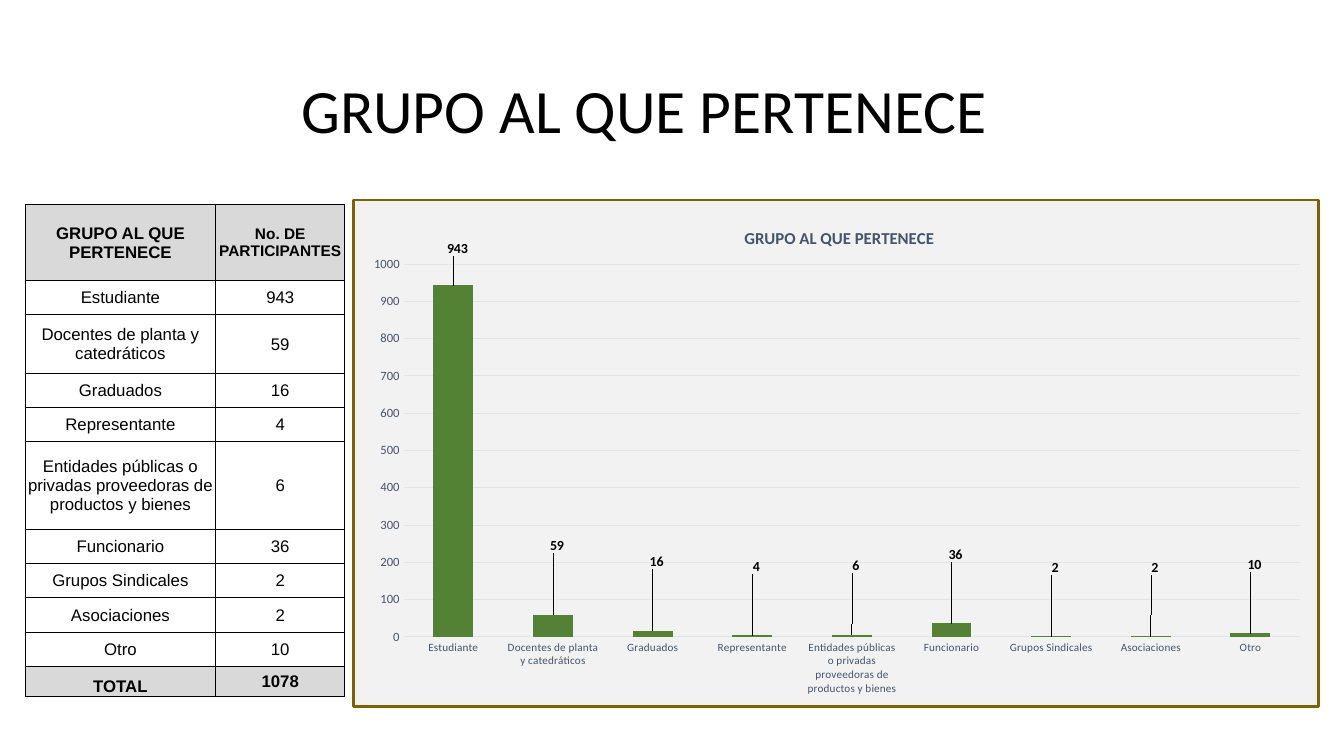
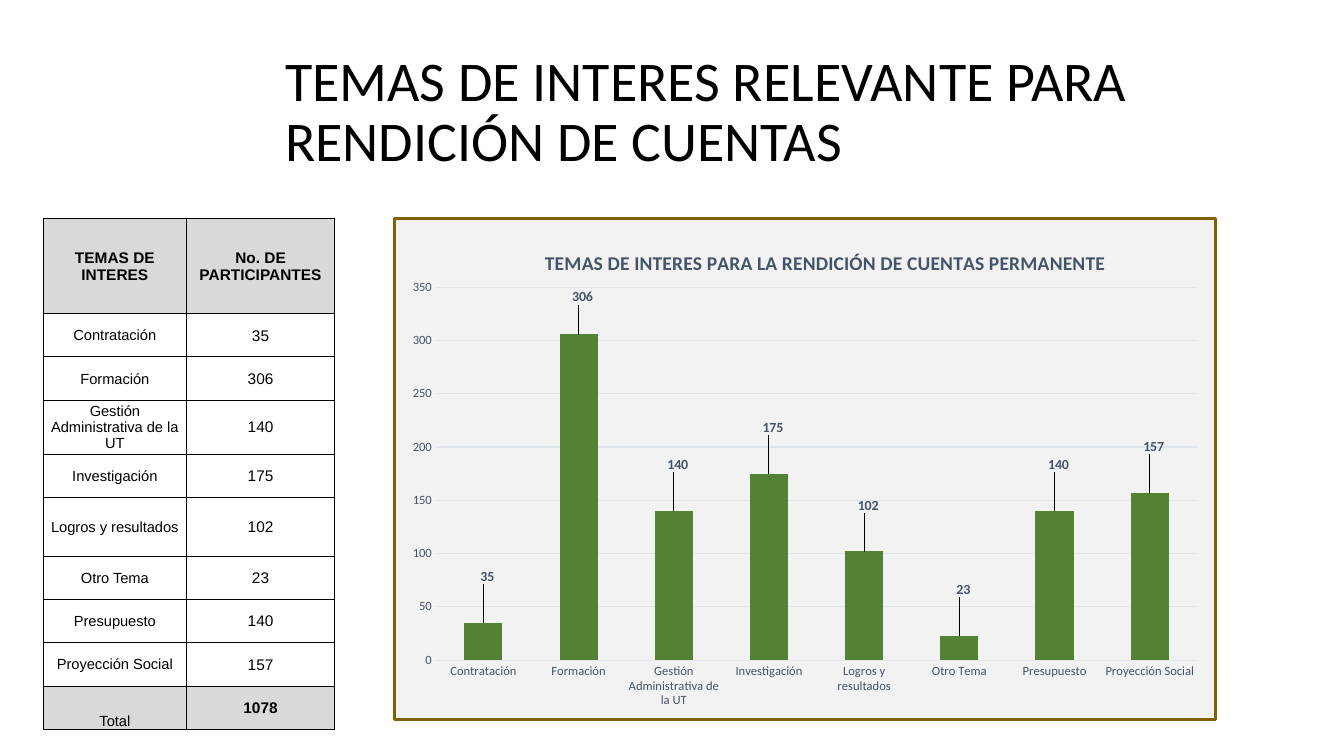
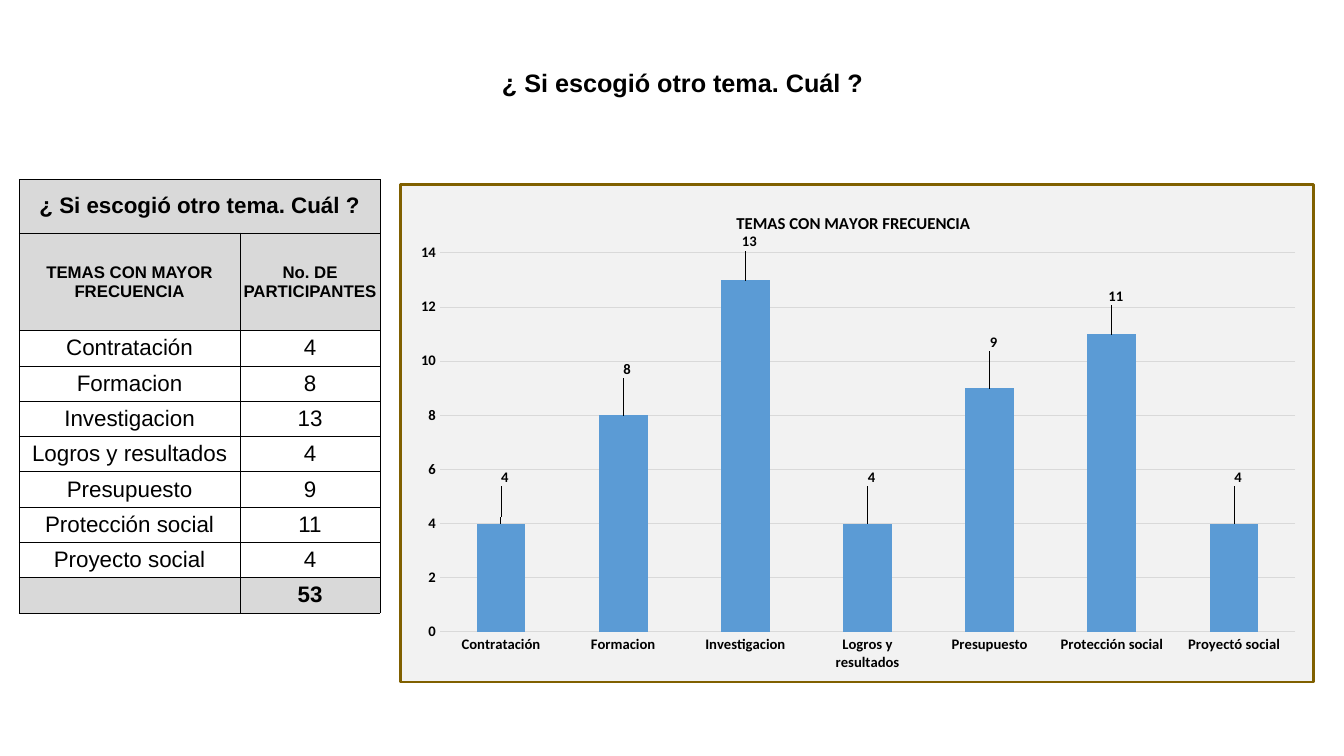
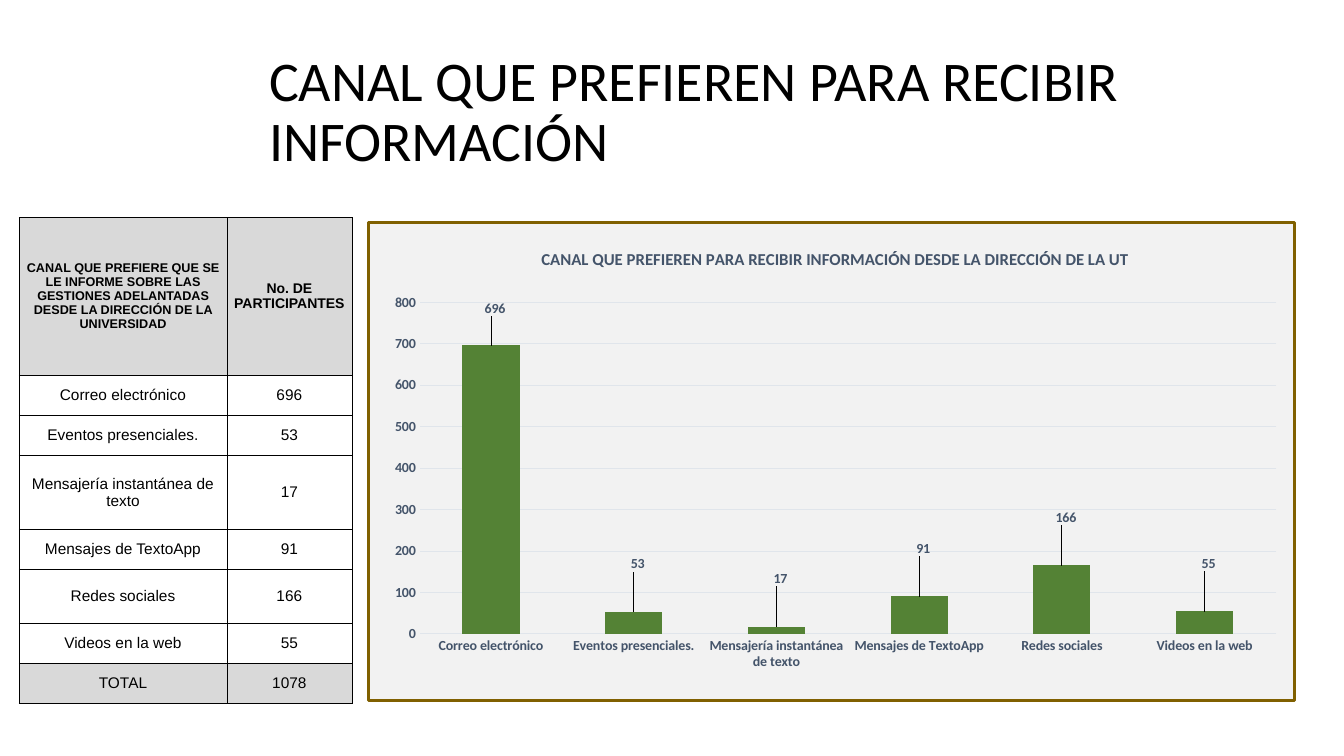
from lxml.etree import SubElement
from pptx import Presentation
from pptx.chart.data import CategoryChartData
from pptx.dml.color import RGBColor
from pptx.enum.chart import XL_CHART_TYPE as ChartType, XL_LABEL_POSITION as LabelPos, XL_TICK_MARK as Tick
from pptx.enum.text import MSO_ANCHOR as Anchor, PP_ALIGN as Align
from pptx.oxml import parse_xml
from pptx.oxml.ns import nsdecls, qn
from pptx.util import Inches, Pt

COLORS = {"black": "000000", "gray": "D9D9D9", "panel": "F2F2F2", "frame": "806000",
          "green": "548235", "blue": "5B9BD5", "slate": "44546A", "grid": "E0E5EB"}
TITLE_TOP, TITLE_HEIGHT, TITLE_RIGHT = 0.4, 1.45, 12.42
PLOT_RIGHT = 0.18  # space between plot and chart frame
TALL_LIFT = 0.25   # lift of the label over a column near the top

# Boxes are (left, top, width, height) in inches; "pad" is the left, top and bottom space
# around the plot, and "lift" how far labels rise above their usual place.
SLIDES = [
    {
        "title": {"text": "GRUPO AL QUE PERTENECE", "left": 2.89, "size": 44},
        "table": {
            "at": (0.25, 2.03), "cols": (1.89, 1.28), "margin": 0.01,
            "height": 0.34, "special": {"GRUPO AL QUE PERTENECE": 0.75, "TOTAL": 0.3,
                                        "Docentes de planta y catedráticos": 0.58,
                                        "Entidades públicas o privadas proveedoras de productos y bienes": 0.87},
            "head": ("GRUPO AL QUE PERTENECE", "No. DE PARTICIPANTES"),
            "head_sizes": (12, 11), "sizes": (12, 12),
            "total": ("TOTAL", "1078"), "total_bold": (True, True), "total_anchor": Anchor.BOTTOM,
        },
        "rows": [("Estudiante", 943), ("Docentes de planta y catedráticos", 59), ("Graduados", 16),
                 ("Representante", 4),
                 ("Entidades públicas o privadas proveedoras de productos y bienes", 6),
                 ("Funcionario", 36), ("Grupos Sindicales", 2), ("Asociaciones", 2), ("Otro", 10)],
        "chart": {
            "title": "GRUPO AL QUE PERTENECE", "title_at": (7.35, 2.21),
            "box": (3.49, 1.97, 9.6, 5.05), "pad": (0.5, 0.64, 0.69),
            "axis_sizes": (8, 9), "scale": (1000, 100), "label_color": "black", "lift": 0.57,
        },
    },
    {
        "title": {"text": "TEMAS DE INTERES RELEVANTE PARA RENDICIÓN DE CUENTAS", "left": 2.73},
        "table": {
            "at": (0.43, 2.17), "cols": (1.42, 1.47), "margin": 0.01,
            "height": 0.43, "special": {"TEMAS DE INTERES": 0.94, "Logros y resultados": 0.58},
            "head": ("TEMAS DE INTERES", "No. DE PARTICIPANTES"),
            "head_sizes": (11, 11), "sizes": (10.5, 11),
            "total": ("Total", "1078"), "total_bold": (False, True), "total_anchor": Anchor.BOTTOM,
        },
        "rows": [("Contratación", 35), ("Formación", 306), ("Gestión Administrativa de la UT", 140),
                 ("Investigación", 175), ("Logros y resultados", 102), ("Otro Tema", 23),
                 ("Presupuesto", 140), ("Proyección Social", 157)],
        "chart": {
            "title": "TEMAS DE INTERES PARA LA RENDICIÓN DE CUENTAS PERMANENTE",
            "title_at": (5.36, 2.43), "title_size": 14,
            "box": (3.9, 2.15, 8.17, 5), "pad": (0.41, 0.69, 0.59),
            "axis_sizes": (9, 9), "scale": (350, 50), "lift": 0.34,
        },
    },
    {
        "title": {"text": "¿ Si escogió otro tema. Cuál ?", "left": 4.86, "top": 0.62, "width": 3.82,
                  "height": 0.4, "size": 18, "font": "Arial", "bold": True,
                  "align": Align.CENTER, "wrap": False, "spacing": 1},
        "table": {
            "at": (0.19, 1.78), "cols": (2.19, 1.39), "margin": 0,
            "height": 0.35, "special": {"¿ Si escogió otro tema. Cuál ?": 0.53,
                                        "TEMAS CON MAYOR FRECUENCIA": 0.97},
            "banner": "¿ Si escogió otro tema. Cuál ?",
            "head": ("TEMAS CON MAYOR FRECUENCIA", "No. DE PARTICIPANTES"),
            "head_sizes": (12, 12), "sizes": (16, 16),
            "total": ("", "53"), "total_bold": (False, True),
        },
        "rows": [("Contratación", 4), ("Formacion", 8), ("Investigacion", 13), ("Logros y resultados", 4),
                 ("Presupuesto", 9), ("Protección social", 11), ("Proyecto social", 4)],
        "chart": {
            "title": "TEMAS CON MAYOR FRECUENCIA", "title_at": (7.27, 2.06),
            "renamed": {"Proyecto social": "Proyectó social"},
            "box": (3.96, 1.82, 9.08, 4.96), "pad": (0.39, 0.68, 0.5),
            "axis_sizes": (10.5, 10.5), "axis_bold": True, "scale": (14, 2), "label_size": 10.5,
            "color": "blue", "text_color": "black", "label_color": "black",
            "grid": "gray", "base_line": False, "lift": 0.33,
        },
    },
    {
        "title": {"text": "CANAL QUE PREFIEREN PARA RECIBIR INFORMACIÓN", "left": 2.57},
        "table": {
            "at": (0.19, 2.16), "cols": (2.06, 1.24), "margin": 0,
            "height": 0.4, "special": {
                "CANAL QUE PREFIERE QUE SE LE INFORME SOBRE LAS GESTIONES ADELANTADAS "
                "DESDE LA DIRECCIÓN DE LA UNIVERSIDAD": 1.56,
                "Mensajería instantánea de texto": 0.73, "Redes sociales": 0.53},
            "head": ("CANAL QUE PREFIERE QUE SE LE INFORME SOBRE LAS GESTIONES ADELANTADAS "
                     "DESDE LA DIRECCIÓN DE LA UNIVERSIDAD", "No. DE PARTICIPANTES"),
            "head_sizes": (9, 10), "sizes": (11, 11),
            "total": ("TOTAL", "1078"), "total_bold": (False, False),
        },
        "rows": [("Correo electrónico", 696), ("Eventos presenciales.", 53),
                 ("Mensajería instantánea de texto", 17), ("Mensajes de TextoApp", 91),
                 ("Redes sociales", 166), ("Videos en la web", 55)],
        "chart": {
            "title": "CANAL QUE PREFIEREN PARA RECIBIR INFORMACIÓN DESDE LA DIRECCIÓN DE LA UT",
            "title_at": (5.33, 2.42),
            "box": (3.64, 2.19, 9.21, 4.77), "pad": (0.51, 0.8, 0.66),
            "axis_sizes": (10, 10), "axis_bold": True, "scale": (800, 100), "lift": 0.36,
        },
    },
]


def rgb(name):
    return RGBColor.from_string(COLORS[name])


def style(font, size, color="black", bold=False, name="Calibri"):
    font.name, font.size, font.bold = name, Pt(size), bold
    font.color.rgb = rgb(color)


def add_title(slide, text, left, top=TITLE_TOP, width=None, height=TITLE_HEIGHT, size=40, font="Calibri",
              bold=False, align=Align.LEFT, wrap=True, spacing=0.9):
    box = left, top, width or TITLE_RIGHT - left, height
    tf = slide.shapes.add_textbox(*map(Inches, box)).text_frame
    tf.word_wrap, tf.vertical_anchor = wrap, Anchor.MIDDLE
    p = tf.paragraphs[0]
    p.alignment, p.line_spacing = align, spacing
    r = p.add_run()
    r.text = text
    style(r.font, size, bold=bold, name=font)


def set_borders(cell):
    tc_pr = cell._tc.get_or_add_tcPr()
    for i, side in enumerate(("lnL", "lnR", "lnT", "lnB")):
        tc_pr.insert(i, parse_xml(
            f'<a:{side} {nsdecls("a")} w="{Pt(0.5)}"><a:solidFill>'
            f'<a:srgbClr val="{COLORS["black"]}"/></a:solidFill></a:{side}>'))


def fill_cell(cell, text, size, bold, shaded, margin, anchor):
    cell.margin_left = cell.margin_right = cell.margin_top = Inches(margin)
    cell.margin_bottom = 0
    cell.vertical_anchor = anchor
    if shaded:
        cell.fill.solid()
        cell.fill.fore_color.rgb = rgb("gray")
    else:
        cell.fill.background()
    set_borders(cell)
    if text:
        p = cell.text_frame.paragraphs[0]
        p.alignment = Align.CENTER
        r = p.add_run()
        r.text = text
        style(r.font, size, bold=bold, name="Arial")


def add_count_table(slide, rows, at, cols, height, special, margin, head, head_sizes, sizes, total,
                    total_bold, total_anchor=Anchor.MIDDLE, banner=None):
    """Add the table; special holds the heights of rows that differ, by their first text."""
    lines = [(head, head_sizes, (True, True), True)]
    lines += [((name, str(n)), sizes, (False, False), False) for name, n in rows]
    lines += [(total, sizes, total_bold, True)]
    if banner:
        lines.insert(0, ((banner, ""), sizes, (True, True), True))
    heights = [special.get(texts[0], height) for texts, *_ in lines]

    size = sum(cols), sum(heights)
    table = slide.shapes.add_table(len(lines), len(cols), *map(Inches, at + size)).table
    table.first_row = table.horz_banding = False
    for col, width in zip(table.columns, cols):
        col.width = Inches(width)
    for row, row_height in zip(table.rows, heights):
        row.height = Inches(row_height)
    for i, (texts, text_sizes, bolds, shaded) in enumerate(lines):
        for j, (text, pts, bold) in enumerate(zip(texts, text_sizes, bolds)):
            is_total_name = i == len(lines) - 1 and j == 0
            fill_cell(table.cell(i, j), text, pts, bold, shaded, margin,
                      total_anchor if is_total_name else Anchor.MIDDLE)
    if banner:
        table.cell(0, 0).merge(table.cell(0, 1))


def set_layout(parent, after=None, **values):
    """Give a chart part a manual place, in fractions of the chart."""
    for old in parent.findall(qn("c:layout")):
        parent.remove(old)
    layout = parse_xml(f'<c:layout {nsdecls("c")}><c:manualLayout/></c:layout>')
    for tag, val in values.items():
        SubElement(layout[0], qn(f"c:{tag}")).set("val", str(val))
    if after:
        parent.find(qn(after)).addnext(layout)
    else:
        parent.insert(0, layout)


def add_column_chart(slide, rows, title, title_at, box, pad, axis_sizes, scale, lift, title_size=12,
                     axis_bold=False, renamed=None, color="green", text_color="slate",
                     label_color="slate", label_size=10, grid="grid", base_line=True):
    left, top, width, height = box
    data = CategoryChartData()
    data.categories = [(renamed or {}).get(name, name) for name, _ in rows]
    data.add_series("Series 1", [n for _, n in rows])
    chart = slide.shapes.add_chart(ChartType.COLUMN_CLUSTERED, *map(Inches, box), data).chart
    chart.has_legend = False
    style(chart.font, 10)
    chart.element.find(qn("c:txPr")).addprevious(parse_xml(
        f'<c:spPr {nsdecls("c", "a")}><a:solidFill><a:srgbClr val="{COLORS["panel"]}"/></a:solidFill>'
        f'<a:ln w="{Pt(2)}"><a:solidFill><a:srgbClr val="{COLORS["frame"]}"/></a:solidFill></a:ln></c:spPr>'))

    r = chart.chart_title.text_frame.paragraphs[0].add_run()
    r.text = title
    style(r.font, title_size, text_color, True)
    chart.chart_title.include_in_layout = False
    set_layout(next(chart.element.iter(qn("c:title"))), "c:tx", xMode="edge", yMode="edge",
               x=(title_at[0] - left) / width, y=(title_at[1] - top) / height)
    pad_left, pad_top, pad_bottom = pad
    set_layout(next(chart.element.iter(qn("c:plotArea"))), layoutTarget="inner", xMode="edge", yMode="edge",
               x=pad_left / width, y=pad_top / height,
               w=1 - (pad_left + PLOT_RIGHT) / width, h=1 - (pad_top + pad_bottom) / height)

    cat_axis, val_axis = chart.category_axis, chart.value_axis
    for axis, size in zip((cat_axis, val_axis), axis_sizes):
        axis.major_tick_mark = axis.minor_tick_mark = Tick.NONE
        style(axis.tick_labels.font, size, text_color, axis_bold)
        axis.format.line.fill.background()
    lines = [val_axis.major_gridlines.format.line] + [cat_axis.format.line] * base_line
    for line in lines:
        line.color.rgb, line.width = rgb(grid), Pt(0.75)
    val_axis.minimum_scale = 0
    val_axis.maximum_scale, val_axis.major_unit = scale

    bars = chart.plots[0]
    bars.gap_width, bars.vary_by_categories = 150, False
    series = bars.series[0]
    series.format.fill.solid()
    series.format.fill.fore_color.rgb = rgb(color)
    labels = series.data_labels
    labels.show_value = True
    style(labels.font, label_size, label_color, True)
    for i in range(len(rows)):
        label = series.points[i].data_label
        style(label.font, label_size, label_color, True)
        label.position = LabelPos.OUTSIDE_END
    for label_xml, (_, n) in zip(chart.element.iter(qn("c:dLbl")), rows):
        rise = TALL_LIFT if n > 0.75 * scale[0] else lift
        set_layout(label_xml, "c:idx", x=0.04 / width, y=-rise / height)


def main():
    prs = Presentation()
    prs.slide_width, prs.slide_height = Inches(13.33), Inches(7.5)
    for content in SLIDES:
        s = prs.slides.add_slide(prs.slide_layouts[6])
        add_title(s, **content["title"])
        add_count_table(s, content["rows"], **content["table"])
        add_column_chart(s, content["rows"], **content["chart"])
    prs.save("out.pptx")


if __name__ == "__main__":
    main()
